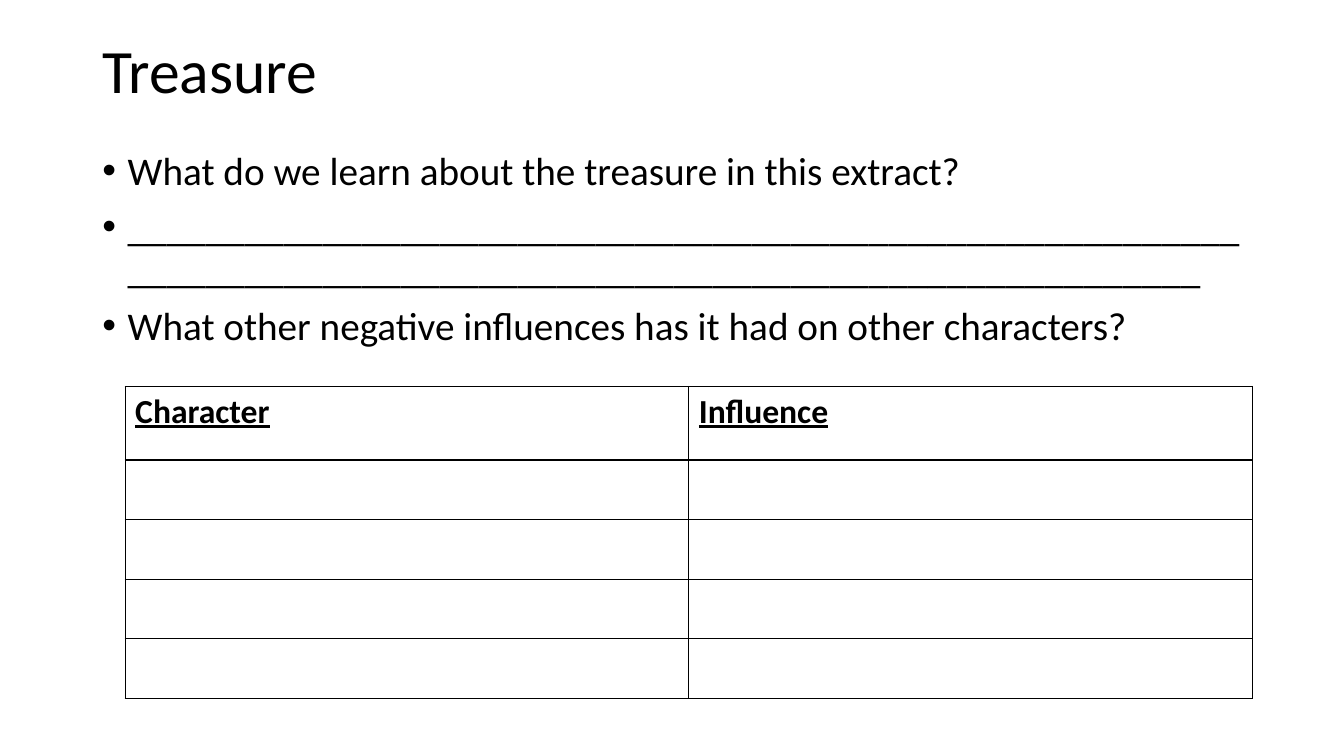
from dataclasses import dataclass

from lxml.etree import SubElement
from pptx import Presentation
from pptx.dml.color import RGBColor
from pptx.enum.text import MSO_ANCHOR, MSO_AUTO_SIZE, PP_ALIGN
from pptx.oxml.ns import qn
from pptx.util import Inches, Pt


@dataclass(frozen=True)
class Theme:
    font: str = "Calibri"
    ink: str = "000000"
    paper: str = "FFFFFF"
    title_size: int = 44
    body_size: int = 28
    table_size: int = 24
    line_spacing: float = 0.9
    space_before: int = 10
    border_width: int = 1


class WorksheetSlide:
    """Draws worksheet elements on one slide, placed by a 160 by 90 grid."""

    columns, rows = 160, 90

    def __init__(self, presentation, theme):
        self.theme = theme
        self.column = presentation.slide_width / self.columns
        self.row = presentation.slide_height / self.rows
        self.slide = presentation.slides.add_slide(presentation.slide_layouts[1])
        fill = self.slide.background.fill
        fill.solid()
        fill.fore_color.rgb = RGBColor.from_string(theme.paper)

    def box(self, left, top, width, height):
        return (round(left * self.column), round(top * self.row),
                round(width * self.column), round(height * self.row))

    def place(self, shape, area, anchor):
        shape.left, shape.top, shape.width, shape.height = self.box(*area)
        frame = shape.text_frame
        frame.word_wrap = True
        frame.auto_size = MSO_AUTO_SIZE.NONE
        frame.vertical_anchor = anchor
        return frame

    def add_text(self, paragraph, text, size, strong=False):
        paragraph.alignment = PP_ALIGN.LEFT
        run = paragraph.add_run()
        run.text = text
        run.font.name = self.theme.font
        run.font.size = Pt(size)
        run.font.bold = run.font.underline = strong
        run.font.color.rgb = RGBColor.from_string(self.theme.ink)

    def title(self, text, area):
        frame = self.place(self.slide.shapes.title, area, MSO_ANCHOR.MIDDLE)
        paragraph = frame.paragraphs[0]
        paragraph.line_spacing = self.theme.line_spacing
        self.add_text(paragraph, text, self.theme.title_size)

    def bullets(self, items, area):
        frame = self.place(self.slide.placeholders[1], area, MSO_ANCHOR.TOP)
        for index, item in enumerate(items):
            paragraph = frame.add_paragraph() if index else frame.paragraphs[0]
            paragraph.line_spacing = self.theme.line_spacing
            paragraph.space_before = Pt(self.theme.space_before)
            self.add_text(paragraph, item, self.theme.body_size)
            properties = paragraph._p.get_or_add_pPr()
            properties.set("marL", str(Inches(0.25)))
            properties.set("indent", str(Inches(-0.25)))
            SubElement(properties, qn("a:buFont"), typeface="Arial")
            SubElement(properties, qn("a:buChar"), char="•")

    def border(self, cell):
        properties = cell._tc.get_or_add_tcPr()
        for side in ("lnL", "lnR", "lnT", "lnB"):
            line = SubElement(properties, qn(f"a:{side}"),
                              w=str(Pt(self.theme.border_width)))
            fill = SubElement(line, qn("a:solidFill"))
            SubElement(fill, qn("a:srgbClr"), val=self.theme.ink)

    def answer_table(self, headings, area, row_heights):
        left, top, width = area
        table = self.slide.shapes.add_table(
            len(row_heights), len(headings),
            *self.box(left, top, width, sum(row_heights))).table
        table.first_row = table.horz_banding = False
        for row, height in zip(table.rows, row_heights):
            row.height = round(height * self.row)
        for cell in table.iter_cells():
            self.border(cell)
            cell.fill.background()
        for index, heading in enumerate(headings):
            paragraph = table.cell(0, index).text_frame.paragraphs[0]
            self.add_text(paragraph, heading, self.theme.table_size, strong=True)


def main():
    presentation = Presentation()
    presentation.slide_width = Inches(13.33)
    presentation.slide_height = Inches(7.5)
    worksheet = WorksheetSlide(presentation, Theme())
    worksheet.title("Treasure", (11, 0, 138, 17.4))
    worksheet.bullets(
        ["What do we learn about the treasure in this extract?",
         "_" * 112,
         "What other negative influences has it had on other characters?"],
        (11, 17.4, 138, 57.1))
    worksheet.answer_table(["Character", "Influence"], (14.9, 46, 134.2),
                           [8.76] + [7.1] * 4)
    presentation.save("out.pptx")


if __name__ == "__main__":
    main()
